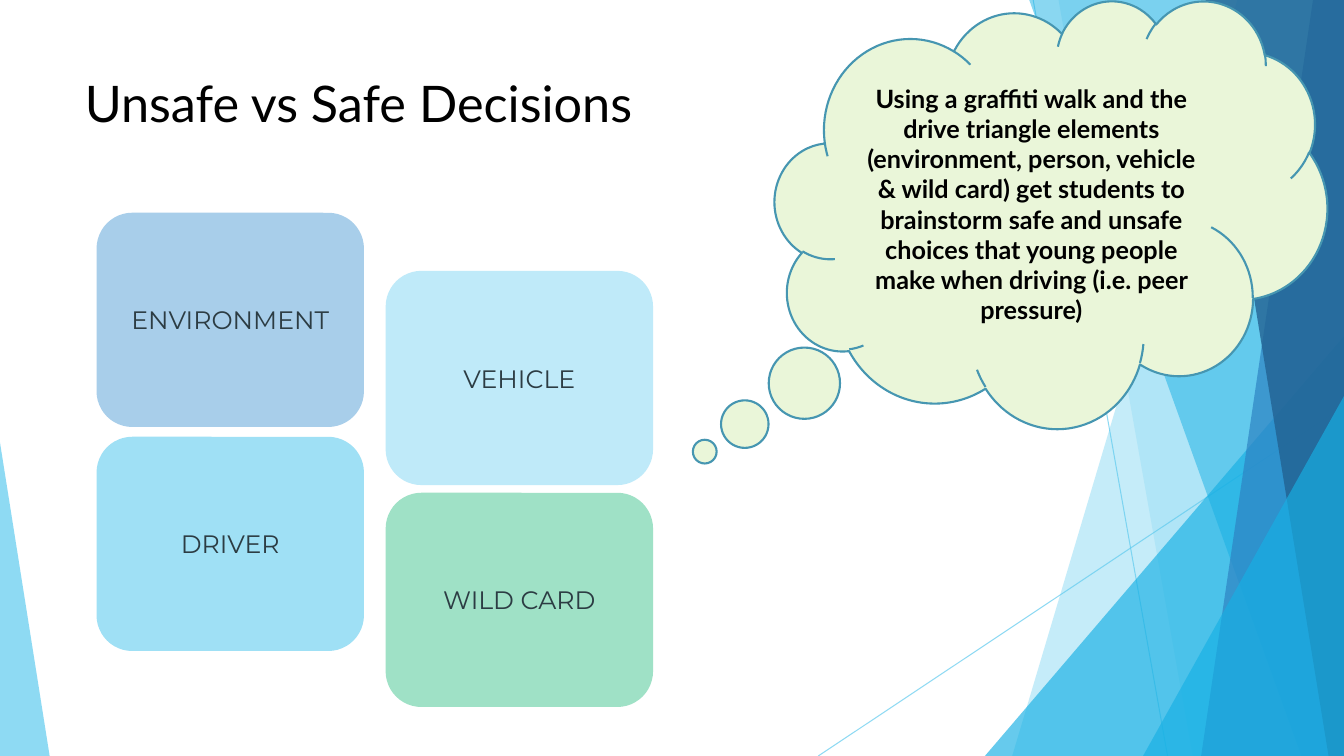
from dataclasses import dataclass

from lxml.etree import SubElement
from pptx import Presentation
from pptx.dml.color import RGBColor
from pptx.enum.shapes import MSO_CONNECTOR as Connector, MSO_SHAPE as Shape
from pptx.enum.text import MSO_ANCHOR as Anchor, PP_ALIGN as Align
from pptx.oxml.ns import qn
from pptx.util import Pt

WIDTH, HEIGHT = 960, 540


@dataclass(frozen=True)
class Theme:
    sky: str = "5FCBEF"
    cyan: str = "17B0E4"
    blue: str = "2E83C3"
    navy: str = "226292"
    black: str = "000000"
    slate: str = "2C3C43"
    cloud: str = "EAF6D9"
    cloud_line: str = "4696B1"
    environment: str = "A8CEEA"
    driver: str = "9FE0F5"
    vehicle: str = "BFEAF9"
    wild_card: str = "9FE1C6"
    text_font: str = "Lato"
    card_font: str = "Montserrat"
    title_size: int = 36
    body_size: int = 18


THEME = Theme()


def points(*values):
    return [Pt(value) for value in values]


def set_alpha(shape, percent):
    for color in shape.element.spPr.iter(qn("a:srgbClr")):
        SubElement(color, qn("a:alpha"), val=str(percent * 1000))


def paint(shape, color, alpha=100):
    shape.shadow.inherit = False
    shape.fill.solid()
    shape.fill.fore_color.rgb = RGBColor.from_string(color)
    shape.line.fill.background()
    if alpha < 100:
        set_alpha(shape, alpha)


def write(shape, text, color, font_format, align=Align.CENTER, anchor=Anchor.MIDDLE):
    frame = shape.text_frame
    frame.word_wrap = True
    frame.vertical_anchor = anchor
    paragraph = frame.paragraphs[0]
    paragraph.alignment = align
    run = paragraph.add_run()
    run.text = text
    for name, value in font_format.items():
        setattr(run.font, name, value)
    run.font.color.rgb = RGBColor.from_string(color)


def add_ray(slide, start, end):
    ray = slide.shapes.add_connector(Connector.STRAIGHT, *points(*start, *end))
    ray.line.width = Pt(0.75)
    ray.line.color.rgb = RGBColor.from_string(THEME.sky)
    set_alpha(ray, 70)
    SubElement(ray.element.spPr, qn("a:effectLst"))


def add_facet(slide, top_x, bottom_x, color, alpha):
    top = -0.6
    builder = slide.shapes.build_freeform(*points(top_x, top))
    corners = [(WIDTH, top), (WIDTH, HEIGHT), (bottom_x, HEIGHT)]
    builder.add_line_segments([points(*corner) for corner in corners], close=True)
    paint(builder.convert_to_shape(), color, alpha)


def add_wedge(slide, left, top, width, apex, color, alpha):
    wedge = slide.shapes.add_shape(
        Shape.ISOSCELES_TRIANGLE, *points(left, top, width, HEIGHT - top))
    wedge.adjustments[0] = apex
    paint(wedge, color, alpha)


def add_backdrop(slide):
    add_ray(slide, (738, 0), (834, HEIGHT))
    add_ray(slide, (WIDTH, 290), (584.5, HEIGHT))
    facets = [
        (884, 723, THEME.sky, 36),
        (756, 852, THEME.sky, 20),
    ]
    front_facets = [
        (735, 929.5, THEME.cyan, 50),
        (938, 858, THEME.blue, 70),
        (861, 949, THEME.navy, 80),
    ]
    for facet in facets:
        add_facet(slide, *facet)
    add_wedge(slide, 703.5, 240, 256.5, 1, THEME.cyan, 66)
    for facet in front_facets:
        add_facet(slide, *facet)
    add_wedge(slide, 816.5, 283, 143.5, 1, THEME.cyan, 66)
    add_wedge(slide, 0, 316, 35.5, 0, THEME.sky, 70)


def add_title(slide, text):
    title = slide.shapes.add_textbox(*points(53.5, 48, 677, 104))
    font_format = {"name": THEME.text_font, "size": Pt(THEME.title_size)}
    write(title, text, THEME.black, font_format, Align.LEFT, Anchor.TOP)


def add_thought(slide, text):
    cloud = slide.shapes.add_shape(Shape.CLOUD_CALLOUT, *points(553.5, 0, 394.5, 305.5))
    cloud.adjustments[0] = -0.627
    cloud.adjustments[1] = 0.556
    paint(cloud, THEME.cloud)
    cloud.line.color.rgb = RGBColor.from_string(THEME.cloud_line)
    cloud.line.width = Pt(1.5)
    font_format = {"name": THEME.text_font, "size": Pt(THEME.body_size), "bold": True}
    write(cloud, text, THEME.black, font_format)


def add_card(slide, text, left, top, color):
    card = slide.shapes.add_shape(Shape.ROUNDED_RECTANGLE, *points(left, top, 191, 153))
    paint(card, color)
    font_format = {"name": THEME.card_font, "size": Pt(THEME.body_size)}
    write(card, text, THEME.slate, font_format)


def main():
    presentation = Presentation()
    presentation.slide_width, presentation.slide_height = points(WIDTH, HEIGHT)
    slide = presentation.slides.add_slide(presentation.slide_layouts[6])
    add_backdrop(slide)
    add_title(slide, "Unsafe vs Safe Decisions")
    add_thought(
        slide,
        "Using a graffiti walk and the drive triangle elements (environment, person, "
        "vehicle & wild card) get students to brainstorm safe and unsafe choices that "
        "young people make when driving (i.e. peer pressure)")
    left_column, right_column = 69, 275.5
    cards = [
        ("DRIVER", left_column, 312, THEME.driver),
        ("VEHICLE", right_column, 193.5, THEME.vehicle),
        ("ENVIRONMENT", left_column, 152, THEME.environment),
        ("WILD CARD", right_column, 352, THEME.wild_card),
    ]
    for card in cards:
        add_card(slide, *card)
    presentation.save("out.pptx")


if __name__ == "__main__":
    main()
